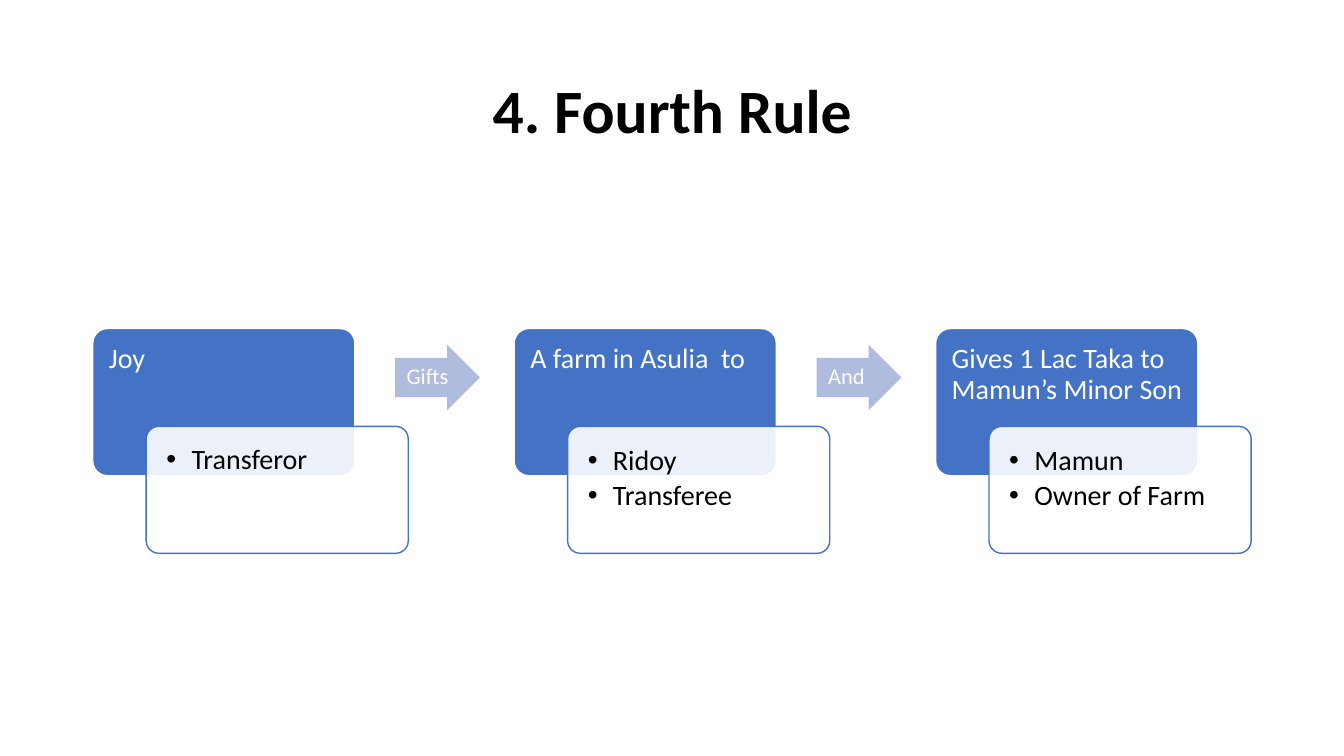
import pptx
import pptx.util
import pptx.dml.color
import pptx.enum.shapes
import pptx.enum.text
import pptx.oxml
import pptx.oxml.ns

Inches = pptx.util.Inches
Pt = pptx.util.Pt
Kind = pptx.enum.shapes.MSO_SHAPE
Align = pptx.enum.text.PP_ALIGN
Anchor = pptx.enum.text.MSO_ANCHOR

BLUE = "4472C4"
WHITE = "FFFFFF"
BLACK = "000000"
PALE = "B0BCDE"
STEP = 4.18

STAGES = [
    ("Joy", ["Transferor"], "Gifts"),
    ("A farm in Asulia  to", ["Ridoy", "Transferee"], "And "),
    ("Gives 1 Lac Taka to Mamun’s Minor Son", ["Mamun", "Owner of Farm"], None),
]


def color(code):
    return pptx.dml.color.RGBColor.from_string(code)


def add_bullet(para):
    props = para._p.get_or_add_pPr()
    props.set("marL", str(Inches(0.25)))
    props.set("indent", str(-Inches(0.25)))
    for tag, key, value in (("a:buFont", "typeface", "Arial"), ("a:buChar", "char", "•")):
        mark = pptx.oxml.parse_xml(f"<{tag} {pptx.oxml.ns.nsdecls('a')}/>")
        mark.set(key, value)
        props.append(mark)


def add_text(slide, box, lines, size=20, code=BLACK, bold=False, bullet=False,
             align=Align.LEFT, anchor=Anchor.TOP, inset=(0, 0, 0, 0), after=0):
    frame = slide.shapes.add_textbox(*map(Inches, box)).text_frame
    frame.word_wrap = True
    frame.vertical_anchor = anchor
    (frame.margin_left, frame.margin_top,
     frame.margin_right, frame.margin_bottom) = map(Inches, inset)
    for index, line in enumerate(lines):
        para = frame.add_paragraph() if index else frame.paragraphs[0]
        para.alignment = align
        para.line_spacing = 0.9
        para.space_after = Pt(after)
        if bullet:
            para.level = 1
            add_bullet(para)
        run = para.add_run()
        run.text = line
        run.font.name = "Calibri"
        run.font.size = Pt(size)
        run.font.bold = bold
        run.font.color.rgb = color(code)


def add_block(slide, kind, box, fill, line=None, adjust=(0.1,), alpha=None):
    shape = slide.shapes.add_shape(kind, *map(Inches, box))
    shape.shadow.inherit = False
    for index, value in enumerate(adjust):
        shape.adjustments[index] = value
    shape.fill.solid()
    shape.fill.fore_color.rgb = color(fill)
    if alpha:
        tint = shape._element.spPr.find(".//" + pptx.oxml.ns.qn("a:srgbClr"))
        tint.append(pptx.oxml.parse_xml(
            f'<a:alpha {pptx.oxml.ns.nsdecls("a")} val="{alpha * 1000}"/>'))
    if line:
        shape.line.color.rgb = color(line)
        shape.line.width = Pt(1)
    else:
        shape.line.fill.background()


def add_title(slide, box):
    add_text(slide, box, ["4. Fourth Rule"], size=44, bold=True, align=Align.CENTER,
             anchor=Anchor.MIDDLE, inset=(0.1, 0.05, 0.1, 0.05))


def add_stage(slide, left, top, head, points):
    add_block(slide, Kind.ROUNDED_RECTANGLE, (left, top, 2.6, 1.46), BLUE, line=WHITE)
    add_text(slide, (left, top, 2.6, 0.98), [head], code=WHITE,
             inset=(0.16, 0.16, 0.1, 0.08), after=7)
    add_block(slide, Kind.ROUNDED_RECTANGLE, (left + 0.53, top + 0.97, 2.6, 1.26),
              WHITE, line=BLUE, alpha=90)
    add_text(slide, (left + 0.57, top + 1.01, 2.53, 1.19), points, bullet=True,
             inset=(0.16, 0.16, 0.16, 0.16), after=3)


def add_arrow(slide, left, top, label):
    add_block(slide, Kind.RIGHT_ARROW, (left, top, 0.84, 0.65), PALE, adjust=(0.6, 0.5))
    add_text(slide, (left, top + 0.13, 0.64, 0.39), [label], size=16, code=WHITE,
             align=Align.CENTER, anchor=Anchor.MIDDLE)


def add_flow(slide, left, top):
    for index, (head, points, label) in enumerate(STAGES):
        start = left + index * STEP
        add_stage(slide, start, top, head, points)
        if label:
            add_arrow(slide, start + 3, top + 0.16, label)


def main():
    deck = pptx.Presentation()
    deck.slide_width = Inches(13.33)
    deck.slide_height = Inches(7.5)
    slide = deck.slides.add_slide(deck.slide_layouts[6])
    add_title(slide, (0.92, 0.4, 11.5, 1.45))
    add_flow(slide, 0.92, 3.26)
    deck.save("out.pptx")


if __name__ == "__main__":
    main()
